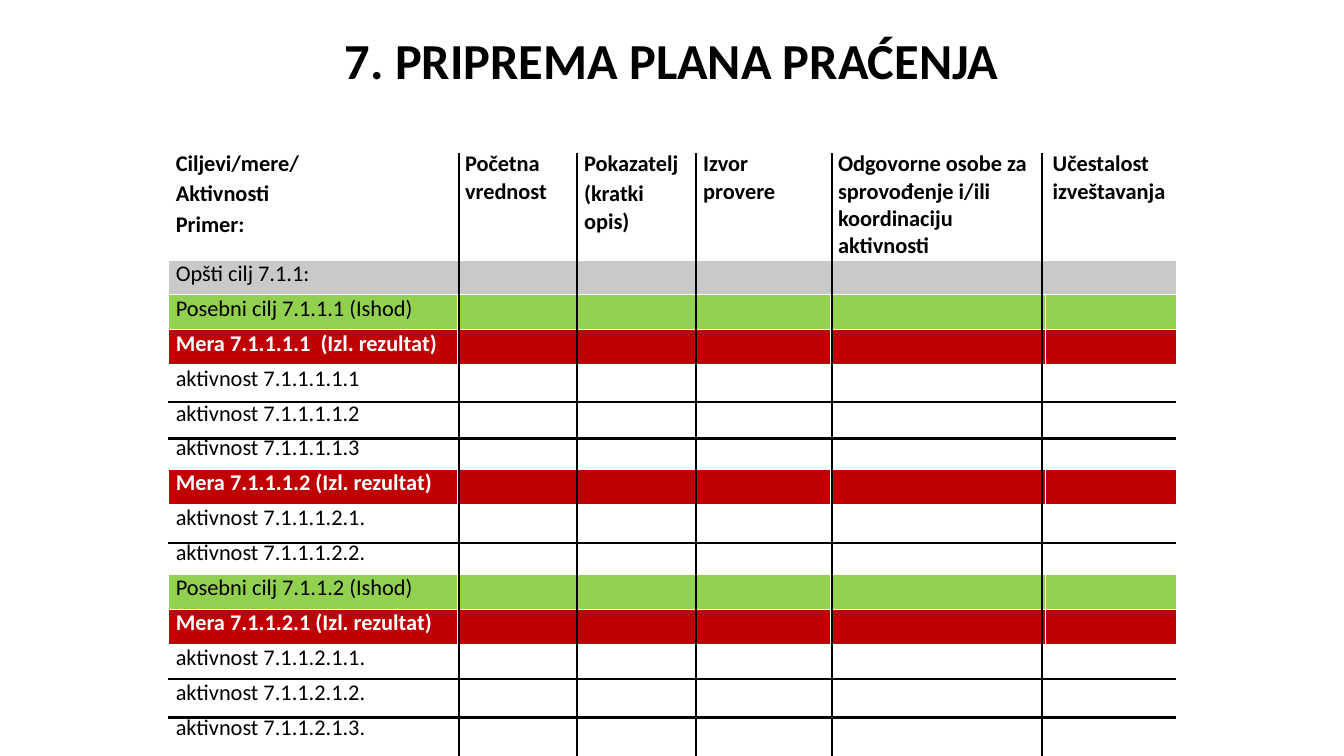
from dataclasses import dataclass

from lxml import etree
from pptx import Presentation
from pptx.dml.color import RGBColor
from pptx.enum import shapes, text
from pptx.oxml import ns
from pptx.util import Cm, Pt


@dataclass(frozen=True)
class Theme:
    font: str = "Calibri"
    title_size: Pt = Pt(36)
    table_size: Pt = Pt(16)
    rule_width: Pt = Pt(1.5)
    black: RGBColor = RGBColor(0x00, 0x00, 0x00)
    white: RGBColor = RGBColor(0xFF, 0xFF, 0xFF)
    grey: RGBColor = RGBColor(0xC9, 0xC9, 0xC9)
    green: RGBColor = RGBColor(0x92, 0xD0, 0x50)
    red: RGBColor = RGBColor(0xC0, 0x00, 0x00)


theme = Theme()


def format_runs(paragraph, size, color, bold):
    for run in paragraph.runs:
        run.font.name = theme.font
        run.font.size = size
        run.font.bold = bold
        run.font.color.rgb = color


def fill_cell(cell, content, fill, color, bold):
    """Write the text of a cell and set its margins, white borders and fill."""
    cell.margin_left = cell.margin_right = Cm(0.19)
    cell.margin_top = cell.margin_bottom = 0
    cell.text_frame.text = content
    for paragraph in cell.text_frame.paragraphs:
        paragraph.space_before = paragraph.space_after = Pt(1)
        paragraph.font.size = theme.table_size
        format_runs(paragraph, theme.table_size, color, bold)
    properties = cell._tc.get_or_add_tcPr()
    for side in ("a:lnL", "a:lnR", "a:lnT", "a:lnB"):
        border = etree.SubElement(properties, ns.qn(side), w=str(Pt(1)))
        solid = etree.SubElement(border, ns.qn("a:solidFill"))
        etree.SubElement(solid, ns.qn("a:srgbClr"), val=str(theme.white))
    if fill is None:
        cell.fill.background()
    else:
        cell.fill.solid()
        cell.fill.fore_color.rgb = fill


presentation = Presentation()
presentation.slide_width = Cm(33.87)
presentation.slide_height = Cm(19.05)
slide = presentation.slides.add_slide(presentation.slide_layouts[5])

# Title
title = slide.shapes.title
title.left, title.top, title.width, title.height = Cm(2.33), Cm(0.25), Cm(29.21), Cm(2.7)
title.text_frame.text = "7. PRIPREMA PLANA PRAĆENJA"
title.text_frame.vertical_anchor = text.MSO_ANCHOR.MIDDLE
heading = title.text_frame.paragraphs[0]
heading.alignment = text.PP_ALIGN.CENTER
heading.line_spacing = 0.9
format_runs(heading, theme.title_size, theme.black, True)

# Monitoring plan: each row kind has a fill, a text colour and a weight
kinds = {
    "header": (None, theme.black, True),
    "Opšti": (theme.grey, theme.black, False),
    "Posebni": (theme.green, theme.black, False),
    "Mera": (theme.red, theme.white, True),
    "aktivnost": (None, theme.black, False),
}
headers = [
    "Ciljevi/mere/\nAktivnosti\nPrimer:",
    "Početna vrednost",
    "Pokazatelj\n(kratki opis)",
    "Izvor provere",
    "Odgovorne osobe za sprovođenje i/ili koordinaciju aktivnosti",
    "Učestalost izveštavanja",
]
goals = [
    "Opšti cilj 7.1.1:",
    "Posebni cilj 7.1.1.1 (Ishod)",
    "Mera 7.1.1.1.1  (Izl. rezultat)",
    "aktivnost 7.1.1.1.1.1",
    "aktivnost 7.1.1.1.1.2",
    "aktivnost 7.1.1.1.1.3",
    "Mera 7.1.1.1.2 (Izl. rezultat)",
    "aktivnost 7.1.1.1.2.1.",
    "aktivnost 7.1.1.1.2.2.",
    "Posebni cilj 7.1.1.2 (Ishod)",
    "Mera 7.1.1.2.1 (Izl. rezultat)",
    "aktivnost 7.1.1.2.1.1.",
    "aktivnost 7.1.1.2.1.2.",
    "aktivnost 7.1.1.2.1.3.",
]
column_widths = [7.29, 3, 3, 3.4, 5.41, 3.3]
left, right = Cm(4.24), Cm(29.64)

table = slide.shapes.add_table(
    len(goals) + 1, len(headers), left, Cm(3.79), right - left, Cm(15.11)
).table
table.first_row = table.horz_banding = False
for column, width in zip(table.columns, column_widths):
    column.width = Cm(width)
for row in table.rows:
    row.height = Cm(0.88)
table.rows[0].height = Cm(2.76)

for cell, header in zip(table.rows[0].cells, headers):
    fill_cell(cell, header, *kinds["header"])
for row_index, goal in enumerate(goals, start=1):
    kind = kinds[goal.split()[0]]
    for column_index in range(len(headers)):
        content = goal if column_index == 0 else ""
        fill_cell(table.cell(row_index, column_index), content, *kind)
table.cell(1, 0).merge(table.cell(1, len(headers) - 1))

# Black rules over the table
top, bottom = Cm(3.86), presentation.slide_height
rules = [(left, Cm(y), right, Cm(y)) for y in (10.13, 11.05, 13.69, 17.12, 18.08)]
rules += [(Cm(x), bottom, Cm(x), top) for x in (11.56, 14.53, 17.53, 20.96, 26.26)]
for ends in rules:
    rule = slide.shapes.add_connector(shapes.MSO_CONNECTOR.STRAIGHT, *ends)
    rule.line.color.rgb = theme.black
    rule.line.width = theme.rule_width
    etree.SubElement(rule._element.spPr, ns.qn("a:effectLst"))

presentation.save("out.pptx")
